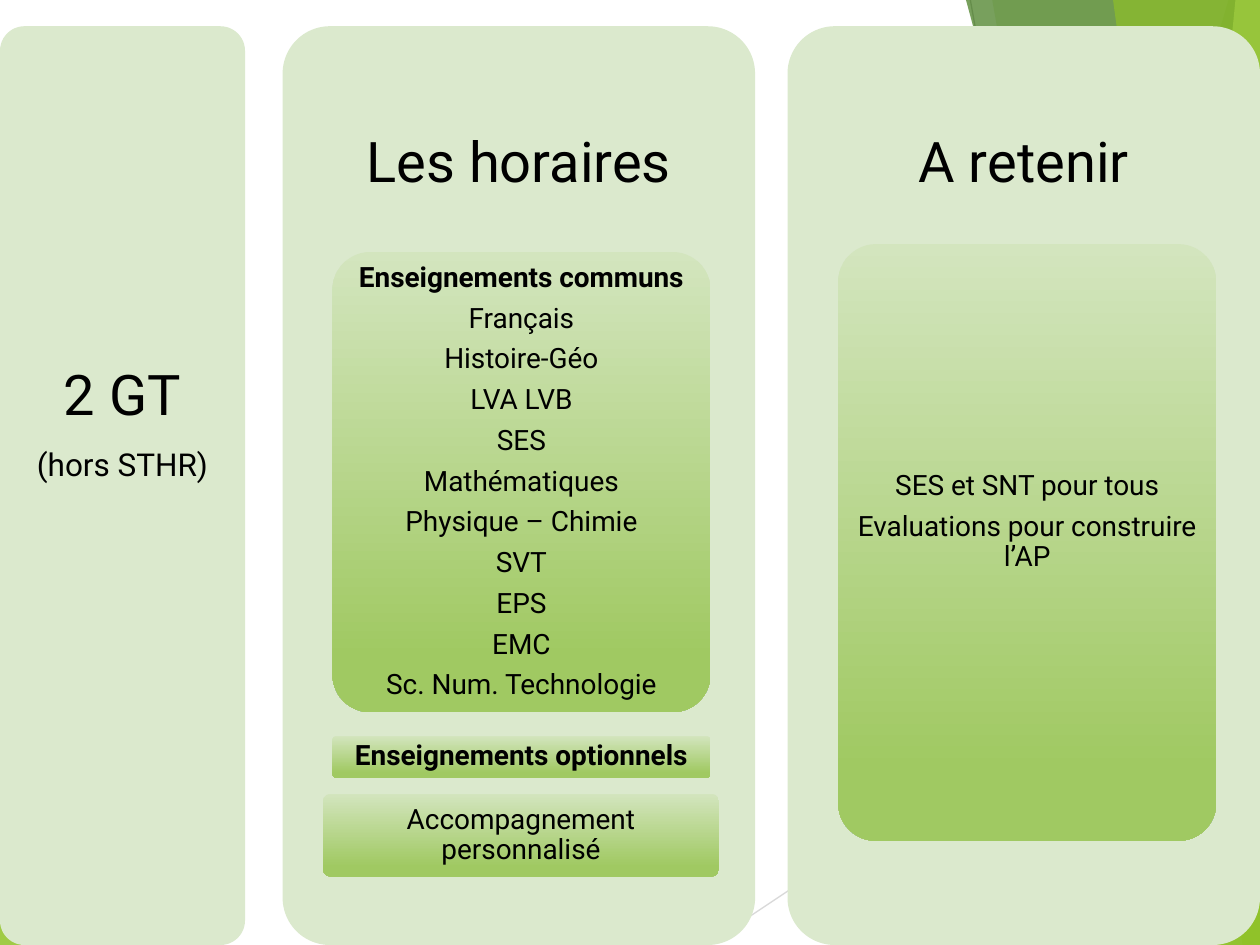
from dataclasses import dataclass

from lxml import etree
from pptx import Presentation
from pptx.dml.color import RGBColor
from pptx.enum.shapes import MSO_CONNECTOR, MSO_SHAPE
from pptx.enum.text import MSO_ANCHOR, PP_ALIGN
from pptx.oxml.ns import qn
from pptx.util import Pt

ROUNDED = MSO_SHAPE.ROUNDED_RECTANGLE
STRAIGHT = MSO_CONNECTOR.STRAIGHT
MIDDLE = MSO_ANCHOR.MIDDLE
CENTER = PP_ALIGN.CENTER
WIDTH, HEIGHT = 720, 540


@dataclass(frozen=True)
class Theme:
    font: str = "Roboto"
    title: int = 32
    subtitle: int = 18
    body: int = 16
    text: str = "000000"
    panel: str = "DBE9CD"
    card_top: str = "D3E5BE"
    card_bottom: str = "A0C962"
    lime: str = "90C226"
    green: str = "54A021"
    forest: str = "3F7819"
    pale: str = "C0E474"
    light_rule: str = "D9D9D9"
    dark_rule: str = "BFBFBF"


THEME = Theme()


@dataclass(frozen=True)
class Facet:
    points: tuple[tuple[float, float], ...]
    color: str
    opacity: int


@dataclass(frozen=True)
class Rule:
    start: tuple[float, float]
    end: tuple[float, float]
    color: str


@dataclass(frozen=True)
class Area:
    left: float
    top: float
    width: float
    height: float


@dataclass(frozen=True)
class Line:
    text: str
    size: int = THEME.body
    bold: bool = False


@dataclass(frozen=True)
class Card:
    area: Area
    lines: tuple[Line, ...]
    bottom_inset: float = 2


@dataclass(frozen=True)
class Column:
    panel: Area
    heading: Area
    lines: tuple[Line, ...]
    cards: tuple[Card, ...] = ()


def right_band(top_x: float, bottom_x: float, color: str, opacity: int) -> Facet:
    corners = ((top_x, 0), (bottom_x, HEIGHT), (WIDTH, HEIGHT), (WIDTH, 0))
    return Facet(corners, color, opacity)


def right_corner(bottom_x: float, side_y: float, color: str, opacity: int) -> Facet:
    corners = ((bottom_x, HEIGHT), (WIDTH, side_y), (WIDTH, HEIGHT))
    return Facet(corners, color, opacity)


BACKDROP = (
    Facet(((0, 316), (35.5, HEIGHT), (0, HEIGHT)), THEME.lime, 85),
    Rule((404, HEIGHT), (WIDTH, 329), THEME.light_rule),
    Rule((554.5, 0), (651, HEIGHT), THEME.dark_rule),
    right_band(702, 543, THEME.lime, 30),
    right_band(567, 662, THEME.lime, 20),
    right_corner(523, 309, THEME.green, 72),
    right_band(552, 698, THEME.forest, 70),
    right_band(706, 653, THEME.pale, 70),
    right_band(636, 710, THEME.lime, 65),
    right_corner(634, 385, THEME.lime, 80),
)

SUBJECTS = ("Français", "Histoire-Géo", "LVA LVB", "SES", "Mathématiques",
            "Physique – Chimie", "SVT", "EPS", "EMC", "Sc. Num. Technologie")

PANEL_TOP, PANEL_HEIGHT, HEADING_HEIGHT = 15, 525, 157.5

COLUMNS = (
    Column(
        Area(0, PANEL_TOP, 140, PANEL_HEIGHT),
        Area(0, 205, 140, 76),
        (Line("2 GT", THEME.title), Line("(hors STHR)", THEME.subtitle)),
    ),
    Column(
        Area(161.5, PANEL_TOP, 270, PANEL_HEIGHT),
        Area(161.5, PANEL_TOP, 270, HEADING_HEIGHT),
        (Line("Les horaires", THEME.title),),
        (
            Card(Area(190, 144, 216, 263),
                 (Line("Enseignements communs", bold=True), *map(Line, SUBJECTS))),
            Card(Area(190, 420.5, 216, 24),
                 (Line("Enseignements optionnels", bold=True),)),
            Card(Area(184.5, 453.5, 226.5, 47.5),
                 (Line("Accompagnement personnalisé"),)),
        ),
    ),
    Column(
        Area(450, PANEL_TOP, 270, PANEL_HEIGHT),
        Area(450, PANEL_TOP, 270, HEADING_HEIGHT),
        (Line("A retenir", THEME.title),),
        (
            Card(Area(479, 139.5, 216, 341),
                 (Line("SES et SNT pour tous"),
                  Line("Evaluations pour construire l’AP")), 25),
        ),
    ),
)


def place(area: Area) -> tuple[Pt, Pt, Pt, Pt]:
    return Pt(area.left), Pt(area.top), Pt(area.width), Pt(area.height)


def paint(shape, color: str) -> None:
    shape.shadow.inherit = False
    shape.line.fill.background()
    shape.fill.solid()
    shape.fill.fore_color.rgb = RGBColor.from_string(color)


def draw_facet(page, facet: Facet) -> None:
    points = [(Pt(x), Pt(y)) for x, y in facet.points]
    builder = page.shapes.build_freeform(*points[0])
    builder.add_line_segments(points[1:], close=True)
    shape = builder.convert_to_shape()
    paint(shape, facet.color)
    color = shape._element.spPr.find(qn("a:solidFill")).find(qn("a:srgbClr"))
    etree.SubElement(color, qn("a:alpha"), val=str(facet.opacity * 1000))


def draw_rule(page, rule: Rule) -> None:
    line = page.shapes.add_connector(STRAIGHT, *map(Pt, rule.start + rule.end))
    line.line.color.rgb = RGBColor.from_string(rule.color)
    line.line.width = Pt(0.75)
    etree.SubElement(line._element.spPr, qn("a:effectLst"))


def write(shape, lines: tuple[Line, ...], bottom_inset: float = 2) -> None:
    frame = shape.text_frame
    frame.text = "\n".join(line.text for line in lines)
    frame.word_wrap = True
    frame.vertical_anchor = MIDDLE
    frame.margin_left = frame.margin_right = Pt(3)
    frame.margin_top, frame.margin_bottom = Pt(2), Pt(bottom_inset)
    for para, line in zip(frame.paragraphs, lines):
        para.alignment = CENTER
        para.line_spacing = 0.9
        para.space_after = Pt(round(line.size * 0.37))
        font = para.runs[0].font
        font.name, font.size, font.bold = THEME.font, Pt(line.size), line.bold
        font.color.rgb = RGBColor.from_string(THEME.text)


def draw_rounded(page, area: Area, color: str):
    shape = page.shapes.add_shape(ROUNDED, *place(area))
    shape.adjustments[0] = 0.1
    paint(shape, color)
    return shape


def draw_card(page, card: Card) -> None:
    shape = draw_rounded(page, card.area, THEME.card_top)
    shape.fill.gradient()
    shape.fill.gradient_angle = 270
    stops = ((0, THEME.card_top), (0.88, THEME.card_bottom))
    for stop, (position, color) in zip(shape.fill.gradient_stops, stops):
        stop.position = position
        stop.color.rgb = RGBColor.from_string(color)
    write(shape, card.lines, card.bottom_inset)


def draw_column(page, column: Column) -> None:
    draw_rounded(page, column.panel, THEME.panel)
    write(page.shapes.add_textbox(*place(column.heading)), column.lines)
    for card in column.cards:
        draw_card(page, card)


def main() -> None:
    deck = Presentation()
    deck.slide_width, deck.slide_height = Pt(WIDTH), Pt(HEIGHT)
    page = deck.slides.add_slide(deck.slide_layouts[6])
    for item in BACKDROP:
        draw = draw_facet if isinstance(item, Facet) else draw_rule
        draw(page, item)
    for column in COLUMNS:
        draw_column(page, column)
    deck.save("out.pptx")


if __name__ == "__main__":
    main()
